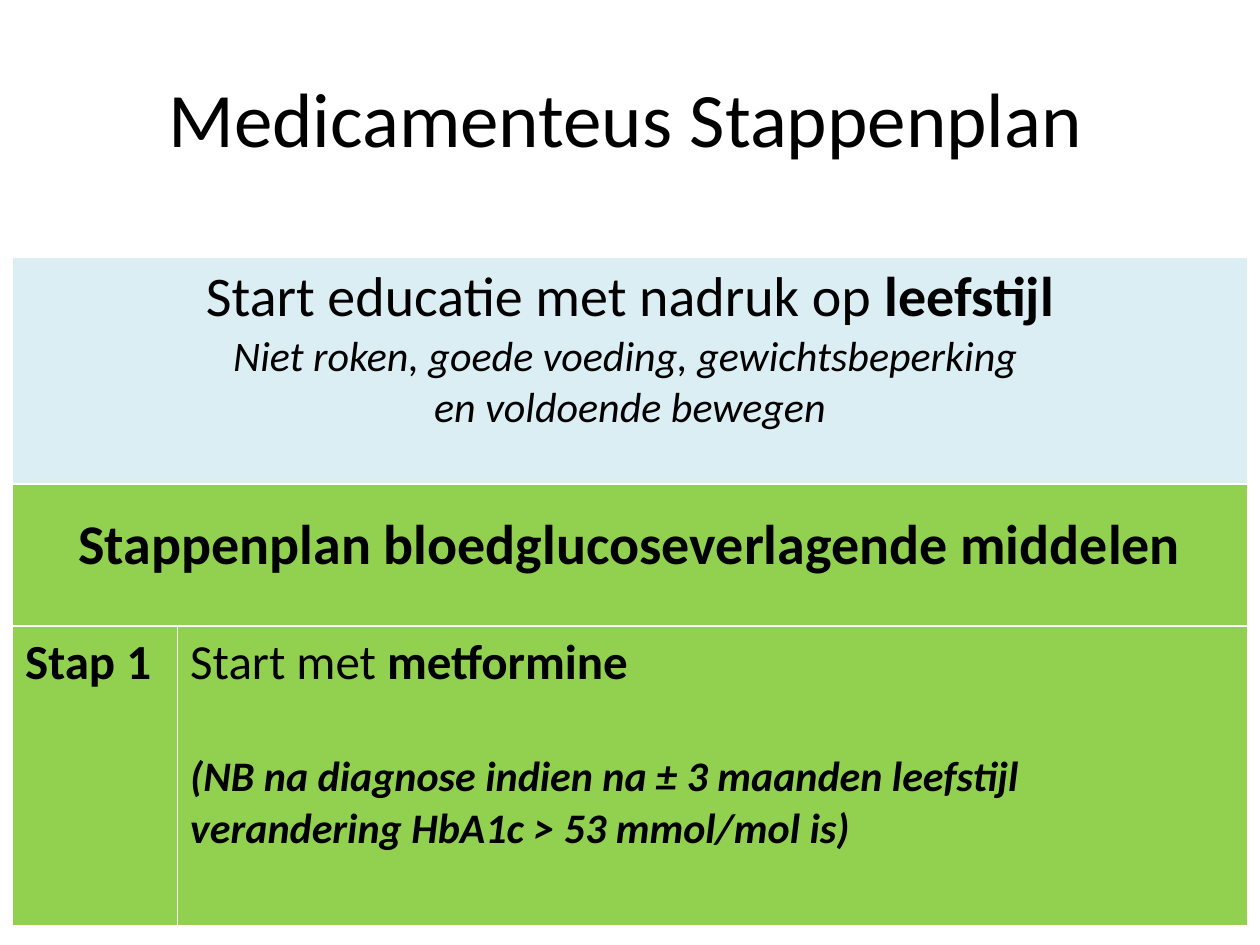
from dataclasses import dataclass

from pptx import Presentation
from pptx.dml.color import RGBColor
from pptx.enum.text import MSO_ANCHOR, PP_ALIGN
from pptx.util import Inches, Pt

FONT = "Calibri"
BLACK, LIGHT_BLUE, GREEN = "000000", "DBEEF4", "92D050"
COLUMN_WIDTHS = (1.31, 8.49)
ROW_HEIGHTS = (1.8, 1.13, 2.38)


@dataclass(frozen=True)
class TextRun:
    text: str
    size: int
    bold: bool = False
    italic: bool = False


@dataclass(frozen=True)
class TextLine:
    runs: tuple[TextRun, ...]
    align: PP_ALIGN = PP_ALIGN.LEFT
    space_before: int = 0


@dataclass(frozen=True)
class StepCell:
    row: int
    column: int
    fill: str
    lines: tuple[TextLine, ...]
    full_width: bool = False
    margin_top: float = 0.05


CELLS = (
    StepCell(0, 0, LIGHT_BLUE, (
        TextLine((TextRun("Start educatie met nadruk op ", 32),
                  TextRun("leefstijl", 32, bold=True)), PP_ALIGN.CENTER),
        TextLine((TextRun("Niet roken, goede voeding, gewichtsbeperking ", 24, italic=True),),
                 PP_ALIGN.CENTER),
        TextLine((TextRun("en voldoende bewegen", 24, italic=True),), PP_ALIGN.CENTER),
    ), full_width=True),
    StepCell(1, 0, GREEN, (
        TextLine((TextRun("Stappenplan bloedglucoseverlagende middelen", 32, bold=True),),
                 PP_ALIGN.CENTER),
    ), full_width=True, margin_top=0.22),
    StepCell(2, 0, GREEN, (TextLine((TextRun("Stap 1", 28, bold=True),)),)),
    StepCell(2, 1, GREEN, (
        TextLine((TextRun("Start met ", 28), TextRun("metformine", 28, bold=True))),
        TextLine((TextRun("(NB na diagnose indien na ± 3 maanden leefstijl "
                          "verandering HbA1c > 53 mmol/mol is)", 24, bold=True, italic=True),),
                 space_before=34),
    )),
)


def set_color(color_format, value: str) -> None:
    color_format.rgb = RGBColor.from_string(value)


def write_lines(text_frame, lines: tuple[TextLine, ...]) -> None:
    for index, line in enumerate(lines):
        paragraph = text_frame.paragraphs[0] if index == 0 else text_frame.add_paragraph()
        paragraph.alignment = line.align
        if line.space_before:
            paragraph.space_before = Pt(line.space_before)
        for text_run in line.runs:
            run = paragraph.add_run()
            run.text = text_run.text
            font_format = {"name": FONT, "size": Pt(text_run.size),
                           "bold": text_run.bold, "italic": text_run.italic}
            for attribute, value in font_format.items():
                setattr(run.font, attribute, value)
            set_color(run.font.color, BLACK)


def fill_cell(table, step: StepCell) -> None:
    cell = table.cell(step.row, step.column)
    if step.full_width:
        cell.merge(table.cell(step.row, len(COLUMN_WIDTHS) - 1))
    cell.fill.solid()
    set_color(cell.fill.fore_color, step.fill)
    cell.margin_top = Inches(step.margin_top)
    write_lines(cell.text_frame, step.lines)


def main() -> None:
    presentation = Presentation()
    presentation.slide_width, presentation.slide_height = Inches(10), Inches(7.5)
    slide = presentation.slides.add_slide(presentation.slide_layouts[5])

    # Title
    title = slide.shapes.title
    position = {"left": 0.07, "top": 0.3, "width": 9.93, "height": 1.25}
    for attribute, value in position.items():
        setattr(title, attribute, Inches(value))
    title.text_frame.vertical_anchor = MSO_ANCHOR.MIDDLE
    write_lines(title.text_frame,
                (TextLine((TextRun("Medicamenteus Stappenplan ", 44),), PP_ALIGN.CENTER),))

    # Step table; the default table style supplies the white rules
    table = slide.shapes.add_table(
        len(ROW_HEIGHTS), len(COLUMN_WIDTHS), Inches(0.1), Inches(2.04),
        Inches(sum(COLUMN_WIDTHS)), Inches(sum(ROW_HEIGHTS))).table
    for column, width in zip(table.columns, COLUMN_WIDTHS):
        column.width = Inches(width)
    for row, height in zip(table.rows, ROW_HEIGHTS):
        row.height = Inches(height)
    for step in CELLS:
        fill_cell(table, step)

    presentation.save("out.pptx")


if __name__ == "__main__":
    main()
